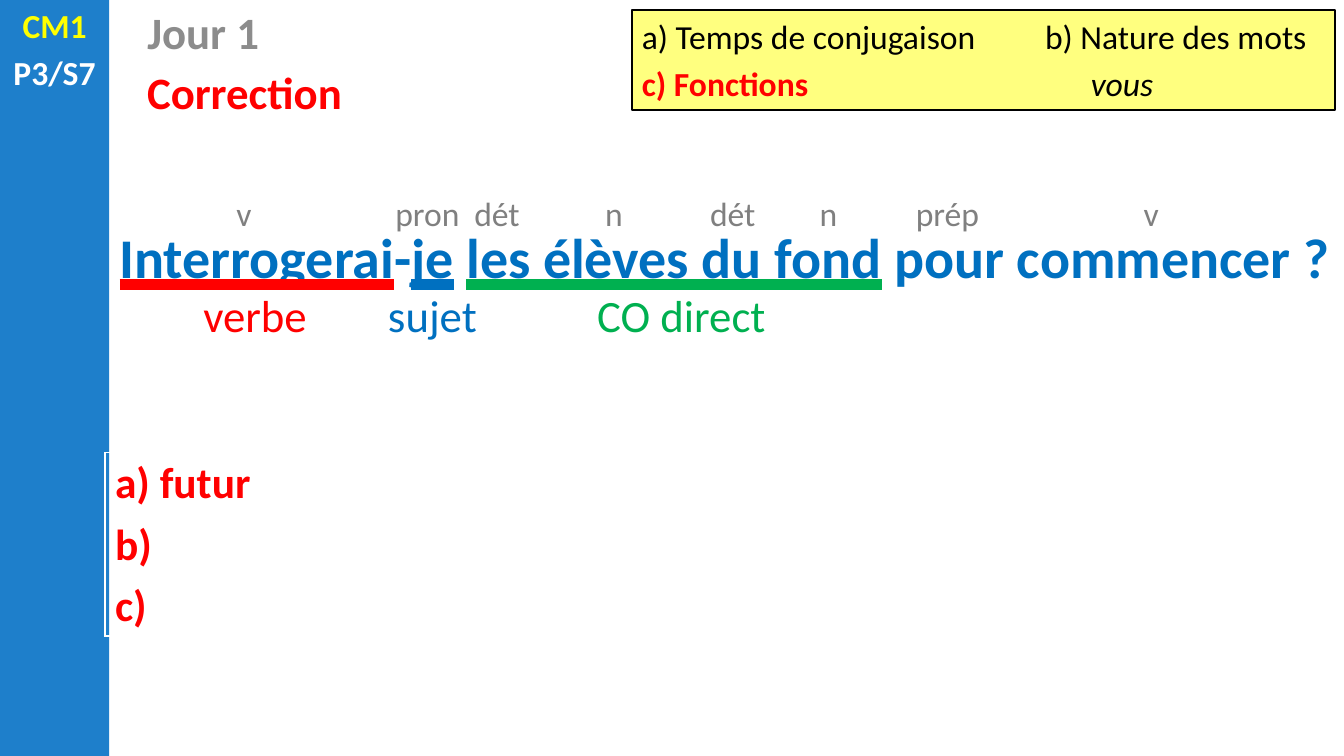
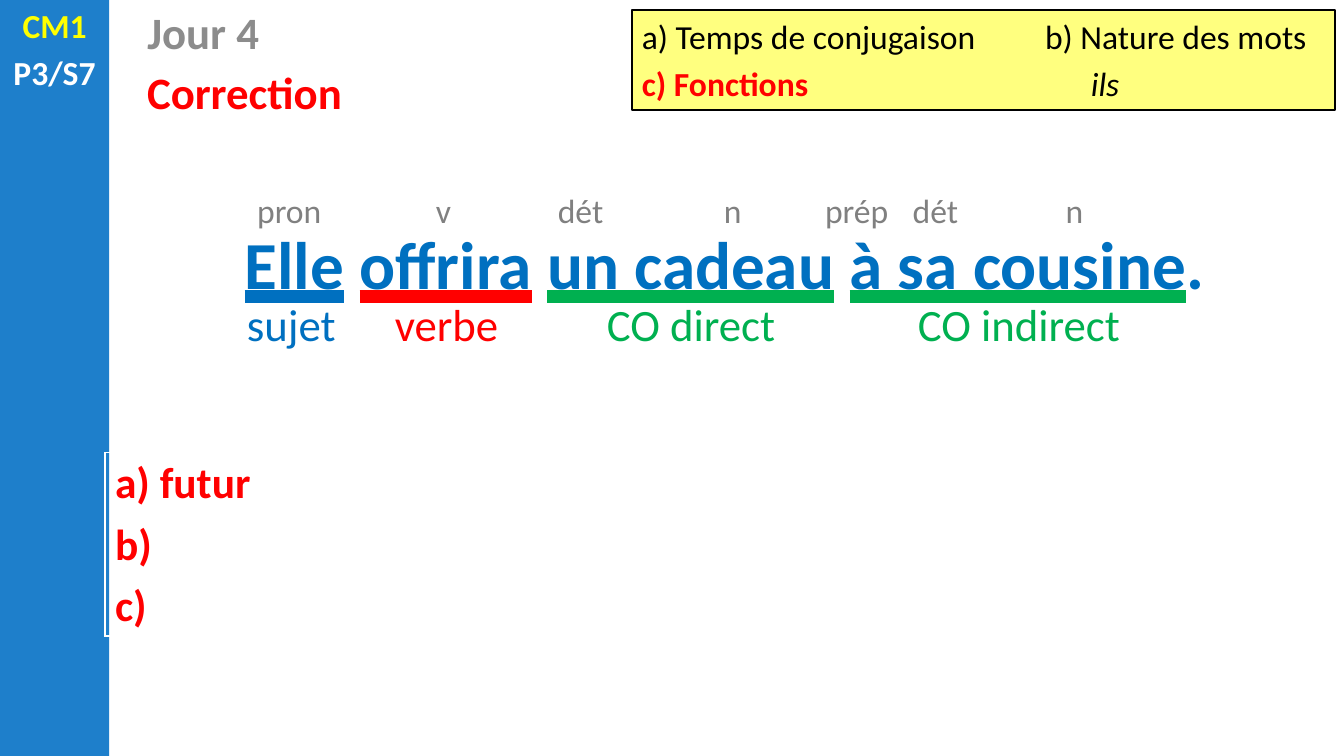
from lxml import etree
from pptx import Presentation
from pptx.dml.color import RGBColor
from pptx.enum import shapes as sh, text as tx
from pptx.oxml.ns import qn
from pptx.util import Pt

# Content
HEX = {"band": "1E7FCB", "yellow": "FFFF00", "white": "FFFFFF",
       "black": "000000", "title": "8C8C8C", "tag": "808080",
       "red": "FF0000", "blue": "0070C0", "green": "00B050"}
ROLES = {"verbe": "red", "sujet": "blue",
         "CO direct": "green", "CO indirect": "green"}
ANSWERS = ["a) futur", "b)", "c)"]

# parts: (words, role or None); tags and roles: (label, centre)
DAYS = [
    {"title": "Jour 1", "word": "vous", "size": 40,
     "parts": [("Interrogerai", "verbe"), ("-", None), ("je", "sujet"),
               (" ", None), ("les élèves du fond", "CO direct"),
               (" pour commencer ?", None)],
     "tag_top": 134.6,
     "tags": [("v", 174.2), ("pron", 305.3), ("dét", 355), ("n", 438.5),
              ("dét", 523.4), ("n", 591.8), ("prép", 676.8), ("v", 822.2)],
     "role_top": 201.6,
     "roles": [("verbe", 182.2), ("sujet", 308.9), ("CO direct", 486.7)]},
    {"title": "Jour 4", "word": "ils", "size": 48,
     "parts": [("Elle", "sujet"), (" ", None), ("offrira", "verbe"),
               (" ", None), ("un cadeau", "CO direct"), (" ", None),
               ("à sa cousine", "CO indirect"), (".", None)],
     "tag_top": 131.8,
     "tags": [("pron", 206.6), ("v", 316.8), ("dét", 414.7), ("n", 523.4),
              ("prép", 612), ("dét", 668.2), ("n", 767.5)],
     "role_top": 208.1,
     "roles": [("sujet", 208.1), ("verbe", 319), ("CO direct", 493.6),
               ("CO indirect", 727.9)]},
]

# Layout, in points
WIDE, HIGH = 960, 540
BAND = 78
MAIN = 75, 885
LEFT = 98


def rgb(name):
    return RGBColor.from_string(HEX[name])


def write(frame, paras, size=24, color="black", bold=False, center=False,
          after=0):
    """Fill a frame; a paragraph is a string or a list of (text, format)."""
    frame.word_wrap = True
    for i, para in enumerate(paras):
        p = frame.paragraphs[0] if i == 0 else frame.add_paragraph()
        p.alignment = tx.PP_ALIGN.CENTER if center else tx.PP_ALIGN.LEFT
        p.space_after = Pt(after)
        p.space_before = Pt(size * 0.2 if i and not after else 0)
        for words, form in [(para, {})] if isinstance(para, str) else para:
            run = p.add_run()
            run.text = words
            font = run.font
            font.name, font.size = "Calibri", Pt(size)
            font.bold = form.get("bold", bold)
            font.italic = form.get("italic", False)
            font.color.rgb = rgb(form.get("color", color))
            if "line" in form:
                underline(run, form["line"])


def underline(run, color):
    run.font.underline = tx.MSO_UNDERLINE.HEAVY_LINE
    fill = etree.Element(qn("a:uFill"))
    solid = etree.SubElement(fill, qn("a:solidFill"))
    etree.SubElement(solid, qn("a:srgbClr"), val=HEX[color])
    run._r.get_or_add_rPr().find(qn("a:solidFill")).addnext(fill)


def label(slide, paras, x, y, w, h, **form):
    box = slide.shapes.add_textbox(Pt(x), Pt(y), Pt(w), Pt(h))
    write(box.text_frame, paras, **form)
    return box


def block(slide, x, y, w, h, color):
    box = slide.shapes.add_shape(sh.MSO_SHAPE.RECTANGLE,
                                 Pt(x), Pt(y), Pt(w), Pt(h))
    box.shadow.inherit = False
    box.fill.solid()
    box.fill.fore_color.rgb = rgb(color)
    box.line.fill.background()
    return box


def set_tab(para, pos):
    tabs = etree.SubElement(para._p.get_or_add_pPr(), qn("a:tabLst"))
    etree.SubElement(tabs, qn("a:tab"), pos=str(Pt(pos)), algn="l")


def add_band(slide, layout):
    """Put the side band and class name on the shared layout."""
    band = block(slide, 0, 0, BAND, HIGH, "band")
    name = label(slide, [[("CM1", {"color": "yellow"})], "P3/S7"],
                 0, 0, BAND, 71, color="white", bold=True, center=True)
    for part in (band, name):
        layout.shapes.element.append(part.element)


def add_guide(slide, word):
    box = block(slide, 451.4, 7.2, 502, 71.3, "yellow")
    clr = box.element.spPr.find(qn("a:solidFill"))[0]
    etree.SubElement(clr, qn("a:alpha"), val="50000")
    box.line.color.rgb = rgb("black")
    box.line.width = Pt(1.5)
    write(box.text_frame, [
        "a) Temps de conjugaison\tb) Nature des mots",
        [("c) Fonctions\t", {"color": "red", "bold": True}),
         (word, {"italic": True})]])
    for para, pos in zip(box.text_frame.paragraphs, (288, 320.7)):
        set_tab(para, pos)


def add_answers(slide):
    x, w = MAIN
    table = slide.shapes.add_table(1, 1, Pt(x), Pt(323.3), Pt(w),
                                   Pt(131)).table
    table.first_row = table.horz_banding = False
    cell = table.cell(0, 0)
    cell.fill.background()
    write(cell.text_frame, ANSWERS, size=31, color="red", bold=True, after=6)


def add_day(slide, day):
    # Headings
    title = slide.shapes.title
    title.left, title.top, title.width, title.height = map(
        Pt, (LEFT, 0, 340, 46))
    title.text_frame.vertical_anchor = tx.MSO_ANCHOR.TOP
    write(title.text_frame, [day["title"]], size=32, color="title", bold=True)
    label(slide, ["Correction"], LEFT, 42.5, 340, 46,
          size=32, color="red", bold=True)
    add_guide(slide, day["word"])

    # Sentence with its tags above and roles below
    runs = [(words, {"line": ROLES[role]} if role else {})
            for words, role in day["parts"]]
    x, w = MAIN
    label(slide, [runs], x, 155.5, w, day["size"] * 1.4,
          size=day["size"], color="blue", bold=True, center=True)
    for tag, mid in day["tags"]:
        label(slide, [tag], mid - 32.5, day["tag_top"], 65, 36,
              color="tag", center=True)
    for role, mid in day["roles"]:
        wide = 18 * len(role)
        label(slide, [role], mid - wide / 2, day["role_top"], wide, 46,
              size=32, color=ROLES[role], center=True)
    add_answers(slide)


def main():
    prs = Presentation()
    prs.slide_width, prs.slide_height = Pt(WIDE), Pt(HIGH)
    layout = prs.slide_layouts[5]
    for i, day in enumerate(DAYS):
        slide = prs.slides.add_slide(layout)
        if i == 0:
            add_band(slide, layout)
        add_day(slide, day)
    prs.save("out.pptx")


if __name__ == "__main__":
    main()
